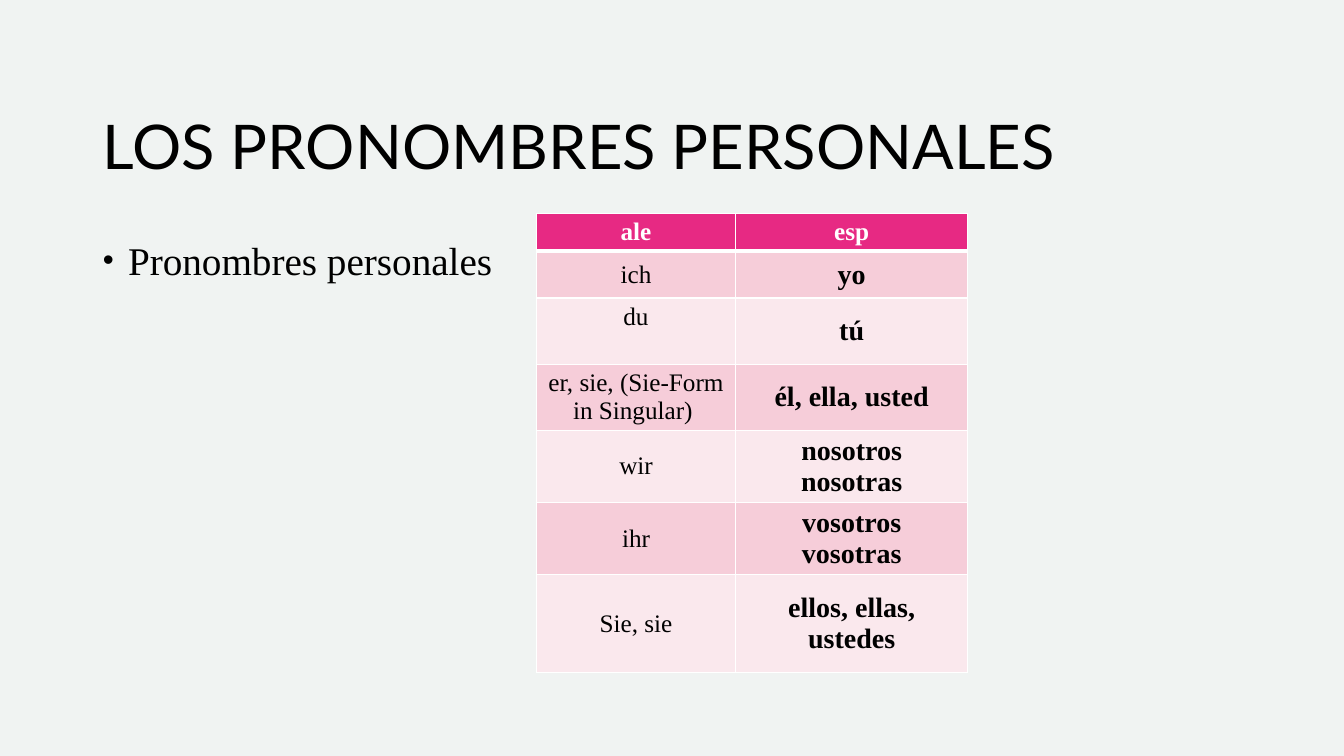
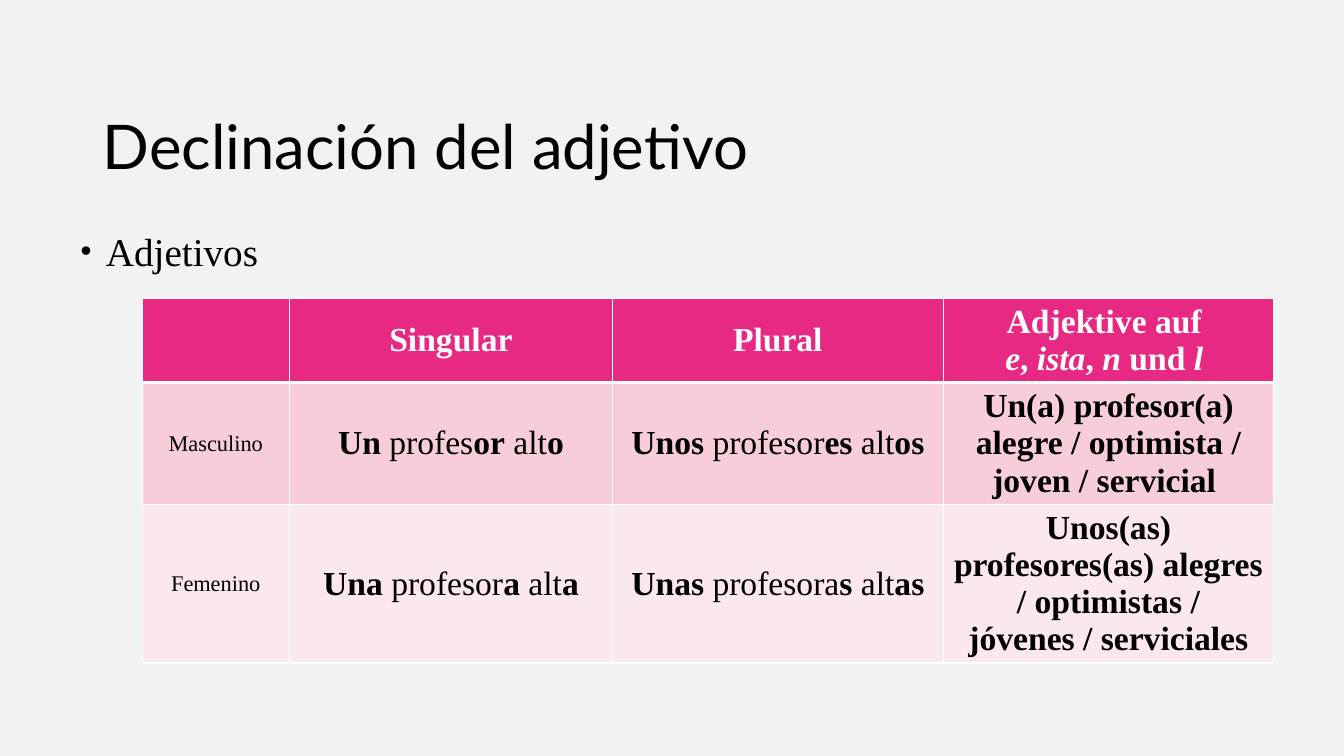
"""Build two Spanish grammar slides, each with a title, a bullet and a table."""
from lxml import etree
from pptx import Presentation
from pptx.dml.color import RGBColor
from pptx.enum.text import MSO_ANCHOR, MSO_AUTO_SIZE, PP_ALIGN
from pptx.oxml.ns import qn
from pptx.util import Inches, Pt

LEFT, MID = PP_ALIGN.LEFT, PP_ALIGN.CENTER
TOP, CORE, LOW = MSO_ANCHOR.TOP, MSO_ANCHOR.MIDDLE, MSO_ANCHOR.BOTTOM
FIXED = MSO_AUTO_SIZE.NONE
WIDE, HIGH = Inches(13.333), Inches(7.5)
SANS, SERIF = "Lato", "Times New Roman"
HUES = {
    "page": "F0F3F2",
    "ink": "000000",
    "line": "FFFFFF",
    "head": "E72983",
    "odd": "F6CDD9",
    "even": "FAE8ED",
}
TITLE = (6.9, 8.5, 86.25, 16.3)

PRONOUNS = [
    ["*ale*", "*esp*"],
    ["ich", "*yo*"],
    ["du", "*tú*"],
    ["er, sie, (Sie-Form in Singular) ", "*él, ella, usted*"],
    ["wir", "*nosotros*\n*nosotras*"],
    ["ihr", "*vosotros*\n*vosotras*"],
    ["Sie, sie", "*ellos, ellas, ustedes*"],
]
ENDINGS = [
    ["", "*Singular*", "*Plural*",
     "*Adjektive auf *\n*_e_, _ista_, _n_ und _l _*"],
    ["Masculino", "*Un* profes*or* alt*o*", "*Unos* profesor*es *alt*os*",
     "*Un(a) profesor(a) alegre / optimista / joven / servicial *"],
    ["Femenino", "*Una* profesor*a *alt*a*", "*Unas* profesora*s *alt*as*",
     "*Unos(as) profesores(as) alegres / optimistas / jóvenes / serviciales*"],
]


def hue(name):
    """Return a named colour."""
    return RGBColor.from_string(HUES[name])


def wide(share):
    """Turn a percentage of the slide's width into a length."""
    return round(WIDE * share / 100)


def high(share):
    """Turn a percentage of the slide's height into a length."""
    return round(HIGH * share / 100)


def place(shape, box):
    """Move a shape to a box of percentages."""
    x, y, w, h = box
    shape.left, shape.top = wide(x), high(y)
    shape.width, shape.height = wide(w), high(h)


def write(para, text, font, size, tone):
    """Add runs; stars toggle bold and underscores toggle italic."""
    for i, part in enumerate(text.split("*")):
        for j, bit in enumerate(part.split("_")):
            if bit:
                run = para.add_run()
                run.text = bit
                run.font.name, run.font.size = font, Pt(size)
                run.font.color.rgb = hue(tone)
                run.font.bold, run.font.italic = i % 2 == 1, j % 2 == 1


def fill_holder(shape, box, text, font, size, anchor, space):
    """Place and fill a placeholder, and return its paragraph."""
    place(shape, box)
    frame = shape.text_frame
    frame.word_wrap, frame.auto_size = True, FIXED
    frame.vertical_anchor = anchor
    para = frame.paragraphs[0]
    para.alignment, para.line_spacing = LEFT, space
    write(para, text, font, size, "ink")
    return para


def add_dot(para):
    """Give a paragraph a small hanging bullet."""
    para.space_before = Pt(10)
    props = para._p.get_or_add_pPr()
    props.set("marL", str(Inches(0.25)))
    props.set("indent", str(-Inches(0.25)))
    etree.SubElement(props, qn("a:buSzPct")).set("val", "80000")
    etree.SubElement(props, qn("a:buChar")).set("char", "•")


def add_edge(cell, row):
    """Draw the white borders of a cell, thick below the header."""
    props = cell._tc.get_or_add_tcPr()
    sides = {"L": 1, "R": 1, "T": 3 if row == 1 else 1, "B": 1 if row else 3}
    for spot, (side, size) in enumerate(sides.items()):
        edge = etree.Element(qn("a:ln" + side), w=str(Pt(size)))
        paint = etree.SubElement(edge, qn("a:solidFill"))
        etree.SubElement(paint, qn("a:srgbClr")).set("val", HUES["line"])
        props.insert(spot, edge)


def fill_cell(cell, row, text, size, anchor):
    """Colour a cell by its row and write its paragraphs."""
    cell.fill.solid()
    cell.fill.fore_color.rgb = hue(("odd" if row % 2 else "even") if row else "head")
    add_edge(cell, row)
    cell.vertical_anchor = anchor
    frame = cell.text_frame
    for i, line in enumerate(text.split("\n")):
        para = frame.add_paragraph() if i else frame.paragraphs[0]
        para.alignment = MID
        write(para, line, SERIF, size, "ink" if row else "line")


def add_grid(slide, spot, cols, rows, data, sizes, raised=()):
    """Add a table; sizes are those of header, first column and the rest."""
    head, label, main = sizes
    table = slide.shapes.add_table(
        len(rows), len(cols), wide(spot[0]), high(spot[1]),
        wide(sum(cols)), high(sum(rows))).table
    for col, share in zip(table.columns, cols):
        col.width = wide(share)
    for r, share in enumerate(rows):
        table.rows[r].height = high(share)
        for c, text in enumerate(data[r]):
            size = head if r == 0 else main if c else label
            anchor = TOP if (r, c) in raised else CORE
            fill_cell(table.cell(r, c), r, text, size, anchor)


def add_page(deck, title, point, box):
    """Add a slide with its title and bullet."""
    slide = deck.slides.add_slide(deck.slide_layouts[1])
    fill_holder(slide.shapes.title, TITLE, title, SANS, 44, LOW, 0.9)
    body = slide.placeholders[1]
    add_dot(fill_holder(body, box, point, SERIF, 28, TOP, 1.1))
    return slide


def main():
    """Build and save the deck."""
    deck = Presentation()
    deck.slide_width, deck.slide_height = WIDE, HIGH
    back = deck.slide_master.background.fill
    back.solid()
    back.fore_color.rgb = hue("page")

    page = add_page(deck, "LOS PRONOMBRES PERSONALES", "Pronombres personales",
                    (6.9, 30, 86.25, 60))
    add_grid(page, (39.9, 28.2), (14.85, 17.25),
             (5, 6.2, 8.75, 8.75, 9.5, 9.5, 12.95),
             PRONOUNS, (18, 18, 20), {(2, 0)})

    page = add_page(deck, "Declinación del adjetivo", "Adjetivos",
                    (5.25, 28.8, 89.55, 65.9))
    add_grid(page, (10.58, 39.45), (10.95, 24.05, 24.6, 24.6),
             (11.1, 16.1, 20.9), ENDINGS, (24, 16, 24))
    deck.save("out.pptx")


if __name__ == "__main__":
    main()
